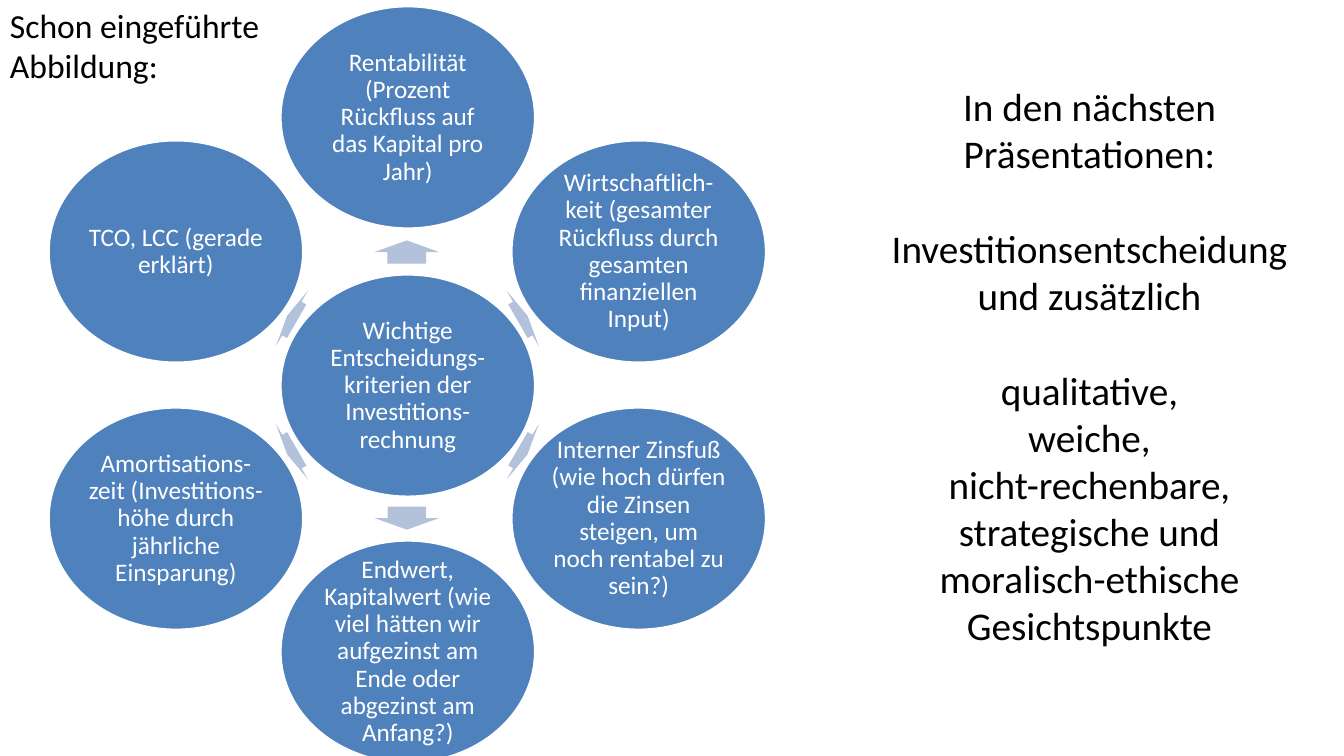
import math

import pptx
import pptx.dml.color
import pptx.enum.shapes
import pptx.enum.text
import pptx.util

RGBColor = pptx.dml.color.RGBColor
Shape = pptx.enum.shapes.MSO_SHAPE
Align = pptx.enum.text.PP_ALIGN
Anchor = pptx.enum.text.MSO_ANCHOR

BLUE = RGBColor(0x4F, 0x81, 0xBD)
PALE_BLUE = RGBColor(0xB3, 0xC1, 0xDB)
WHITE = RGBColor(0xFF, 0xFF, 0xFF)
BLACK = RGBColor(0x00, 0x00, 0x00)

EMU_PER_PX = 9144
HUB_X, HUB_Y = 404, 382
RING_RADIUS = 265
OVAL_WIDTH, OVAL_HEIGHT = 253, 221
ARROW_BREADTH = 64

HUB = "Wichtige Entscheidungs-kriterien der Investitions-rechnung"
CRITERIA = [
    "Rentabilität (Prozent Rückfluss auf das Kapital pro Jahr)",
    "Wirtschaftlich-keit (gesamter Rückfluss durch gesamten finanziellen Input)",
    "Interner Zinsfuß (wie hoch dürfen die Zinsen steigen, um noch rentabel zu sein?)",
    "Endwert, Kapitalwert (wie viel hätten wir aufgezinst am Ende oder abgezinst am Anfang?)",
    "Amortisations-zeit (Investitions-höhe durch jährliche Einsparung)",
    "TCO, LCC (gerade erklärt)",
]
OUTLOOK = [
    ("In den nächsten Präsentationen:", 0),
    ("Investitionsentscheidung und zusätzlich", 34),
    ("qualitative,", 34),
    ("weiche,", 0),
    ("nicht-rechenbare, strategische und moralisch-ethische", 0),
    ("Gesichtspunkte", 0),
]


def px(length):
    return pptx.util.Emu(round(length) * EMU_PER_PX)


def write(paragraph, text, size=18, color=BLACK, font="Calibri",
          align=Align.CENTER, line_spacing=1.0, before=0):
    paragraph.alignment = align
    paragraph.line_spacing = line_spacing
    paragraph.space_before = pptx.util.Pt(before)
    run = paragraph.add_run()
    run.text = text
    run.font.name = font
    run.font.size = pptx.util.Pt(size)
    run.font.color.rgb = color


class CriteriaSlide:
    def __init__(self, presentation):
        self.slide = presentation.slides.add_slide(presentation.slide_layouts[6])

    def centred_shape(self, kind, x, y, width, height, fill):
        shape = self.slide.shapes.add_shape(
            kind, px(x - width / 2), px(y - height / 2), px(width), px(height))
        shape.shadow.inherit = False
        shape.fill.solid()
        shape.fill.fore_color.rgb = fill
        return shape

    def oval(self, x, y, text):
        shape = self.centred_shape(Shape.OVAL, x, y, OVAL_WIDTH, OVAL_HEIGHT, BLUE)
        shape.line.color.rgb = WHITE
        shape.line.width = pptx.util.Pt(2)
        frame = shape.text_frame
        frame.word_wrap = True
        frame.vertical_anchor = Anchor.MIDDLE
        frame.margin_left = frame.margin_right = px(3)
        frame.margin_top = frame.margin_bottom = px(3)
        write(frame.paragraphs[0], text, color=WHITE, line_spacing=0.9)

    def arrow(self, x, y, length, angle):
        shape = self.centred_shape(
            Shape.RIGHT_ARROW, x, y, length, ARROW_BREADTH, PALE_BLUE)
        shape.line.fill.background()
        shape.adjustments[0] = 0.6
        shape.adjustments[1] = 0.5
        shape.rotation = angle % 360

    def text_box(self, left, top, width, height, lines, **style):
        box = self.slide.shapes.add_textbox(px(left), px(top), px(width), px(height))
        frame = box.text_frame
        frame.word_wrap = True
        for index, (text, before) in enumerate(lines):
            paragraph = frame.add_paragraph() if index else frame.paragraphs[0]
            write(paragraph, text, before=before, **style)


def main():
    presentation = pptx.Presentation()
    presentation.slide_width = px(1333)
    presentation.slide_height = px(750)
    slide = CriteriaSlide(presentation)

    slide.oval(HUB_X, HUB_Y, HUB)
    for index, criterion in enumerate(CRITERIA):
        angle = index * 60 - 90
        offset_x = RING_RADIUS * math.cos(math.radians(angle))
        offset_y = RING_RADIUS * math.sin(math.radians(angle))
        arrow_length = 23 if index % 3 == 0 else 11
        slide.arrow(HUB_X + offset_x / 2, HUB_Y + offset_y / 2, arrow_length, angle)
        slide.oval(HUB_X + offset_x, HUB_Y + offset_y, criterion)

    slide.text_box(0, 0, 281, 91, [("Schon eingeführte Abbildung:", 0)],
                   size=24, align=Align.LEFT)
    slide.text_box(856, 77, 449, 605, OUTLOOK, size=28)
    presentation.save("out.pptx")


if __name__ == "__main__":
    main()
